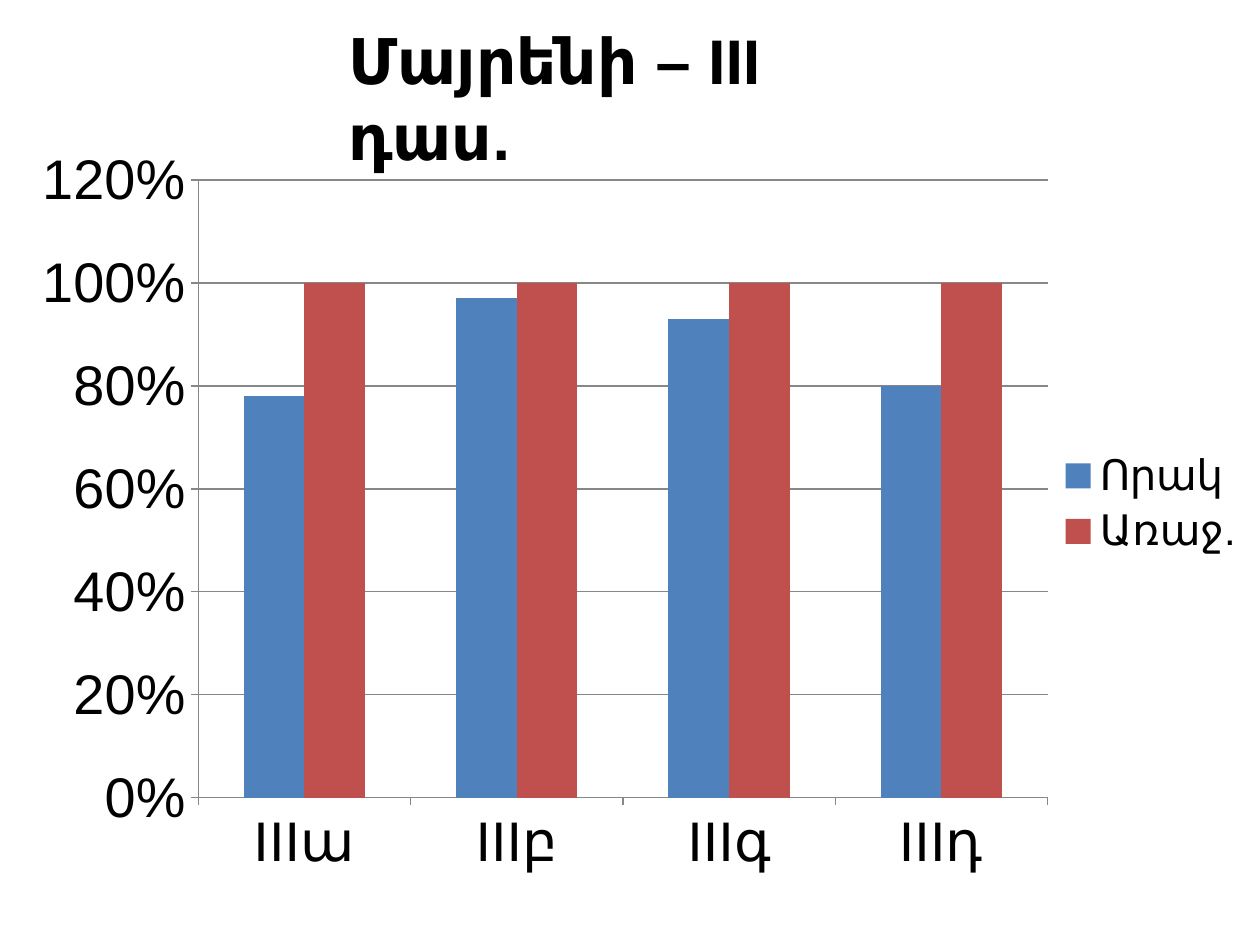
from lxml import etree
from pptx import Presentation
from pptx.chart.data import CategoryChartData
from pptx.dml.color import RGBColor
from pptx.enum.chart import XL_CHART_TYPE, XL_LEGEND_POSITION, XL_TICK_MARK
from pptx.enum.text import MSO_ANCHOR
from pptx.oxml.ns import qn
from pptx.util import Pt

PX = 914400 // 126
COLUMNS = XL_CHART_TYPE.COLUMN_CLUSTERED
LEGEND_RIGHT = XL_LEGEND_POSITION.RIGHT
TICK_OUTSIDE = XL_TICK_MARK.OUTSIDE
MIDDLE = MSO_ANCHOR.MIDDLE

FONT = "Arial"
BLACK = "000000"
AXIS_GREY = "878787"
CLASSES = ["IIIա", "IIIբ", "IIIգ", "IIIդ"]
RATES = [
    ("Որակ", "4F81BD", [0.78, 0.97, 0.93, 0.8]),
    ("Առաջ.", "C0504D", [1, 1, 1, 1]),
]


def color(hex_value):
    return RGBColor.from_string(hex_value)


def emu(box):
    return [PX * length for length in box]


def style_font(font, size, bold=False):
    font.name = FONT
    font.size = Pt(size)
    font.bold = bold
    font.color.rgb = color(BLACK)


def style_line(line):
    line.color.rgb = color(AXIS_GREY)
    line.width = Pt(0.75)


def add_title(slide, box, wording):
    frame = slide.shapes.add_textbox(*emu(box)).text_frame
    frame.word_wrap = True
    frame.vertical_anchor = MIDDLE
    heading = frame.paragraphs[0]
    heading.text = wording
    style_font(heading.font, 36, bold=True)


def place_plot(chart, x, y, w, h):
    """Fix the inner plot area, in fractions of the chart."""
    plot_area = chart.plots[0]._element.getparent()
    for old in plot_area.findall(qn("c:layout")):
        plot_area.remove(old)
    layout = etree.Element(qn("c:layout"))
    manual = etree.SubElement(layout, qn("c:manualLayout"))
    settings = [("layoutTarget", "inner"), ("xMode", "edge"), ("yMode", "edge"),
                ("x", x), ("y", y), ("w", w), ("h", h)]
    for tag, value in settings:
        etree.SubElement(manual, qn(f"c:{tag}")).set("val", str(value))
    plot_area.insert(0, layout)


def add_rates_chart(slide, box):
    data = CategoryChartData(number_format="0%")
    data.categories = CLASSES
    for name, _, values in RATES:
        data.add_series(name, values)
    chart = slide.shapes.add_chart(COLUMNS, *emu(box), data).chart
    chart.has_title = False
    style_font(chart.font, 10)

    plot = chart.plots[0]
    plot.gap_width = 150
    plot.overlap = 0
    plot.vary_by_categories = False
    for series, (_, fill, _) in zip(plot.series, RATES):
        series.format.fill.solid()
        series.format.fill.fore_color.rgb = color(fill)

    rate_axis = chart.value_axis
    for axis in (chart.category_axis, rate_axis):
        style_font(axis.tick_labels.font, 32)
        style_line(axis.format.line)
        axis.major_tick_mark = TICK_OUTSIDE
    rate_axis.minimum_scale = 0
    rate_axis.maximum_scale = 1.2
    rate_axis.major_unit = 0.2
    rate_axis.has_major_gridlines = True
    style_line(rate_axis.major_gridlines.format.line)
    rate_axis.tick_labels.number_format = "0%"
    rate_axis.tick_labels.number_format_is_linked = False

    chart.has_legend = True
    chart.legend.position = LEGEND_RIGHT
    chart.legend.include_in_layout = False
    style_font(chart.legend.font, 24)
    place_plot(chart, 0.125, 0.06, 0.7, 0.84)


def main():
    deck = Presentation()
    deck.slide_width, deck.slide_height = emu((1260, 945))
    slide = deck.slides.add_slide(deck.slide_layouts[6])
    add_title(slide, (336, 53, 566, 89), "Մայրենի – III դաս.")
    add_rates_chart(slide, (42, 136, 1218, 737))
    deck.save("out.pptx")


if __name__ == "__main__":
    main()
